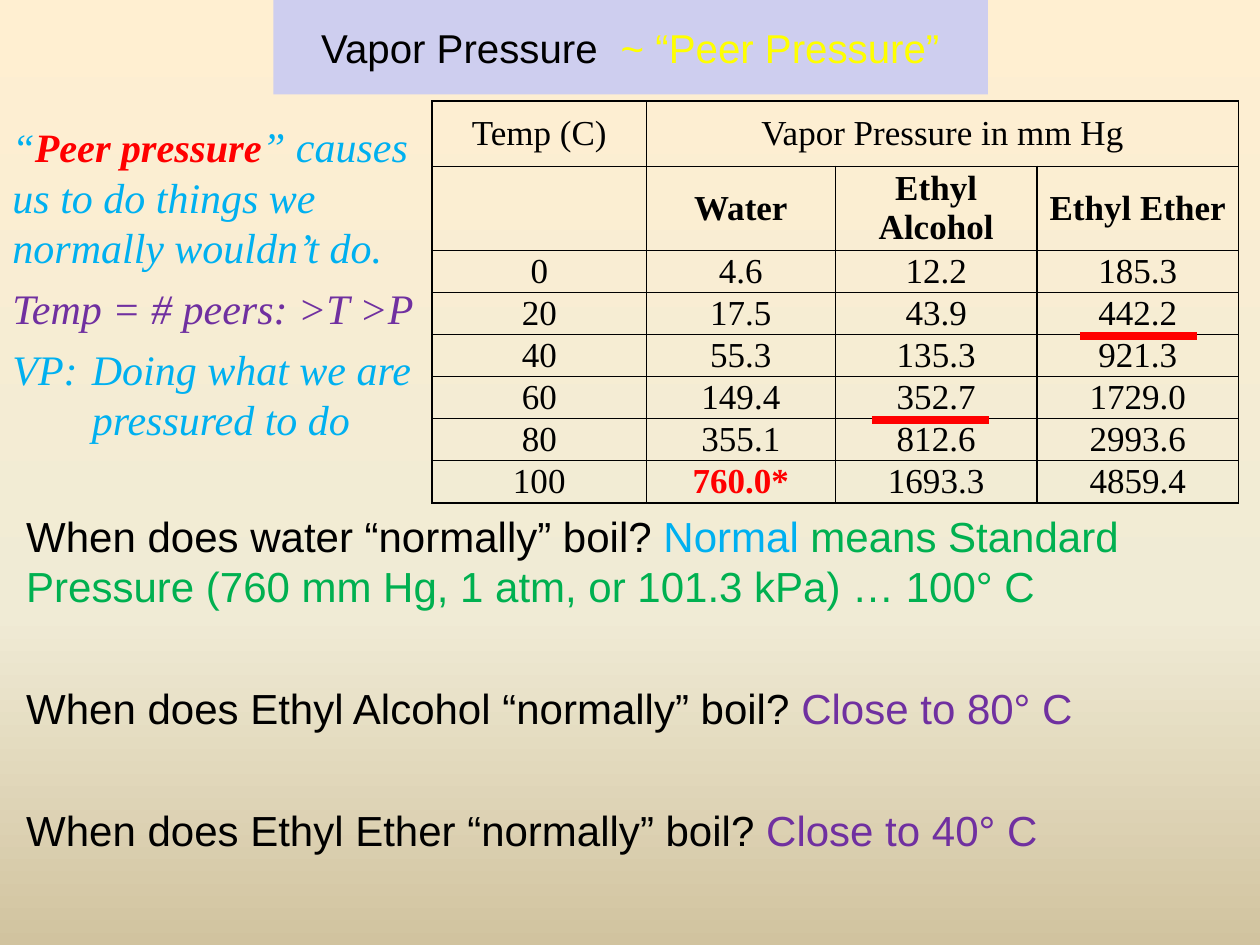
from copy import deepcopy
from dataclasses import dataclass
from typing import NamedTuple

from lxml.etree import SubElement
from pptx import Presentation
from pptx.dml.color import RGBColor as Color
from pptx.enum.shapes import MSO_CONNECTOR as Connector
from pptx.enum.text import MSO_ANCHOR as Anchor, PP_ALIGN as Align
from pptx.oxml.ns import qn
from pptx.util import Inches, Pt

COLUMNS, ROWS, CELL = 100, 75, 0.1


@dataclass(frozen=True)
class Theme:
    """Colours, fonts and type sizes of the slide."""
    sans: str = "Arial"
    serif: str = "Times New Roman"
    title_size: float = 23
    body_size: float = 24
    table_size: float = 20
    border: float = 1
    strike: float = 4.5
    black: str = "000000"
    red: str = "FF0000"
    yellow: str = "FFFF00"
    blue: str = "00B0F0"
    green: str = "00B050"
    purple: str = "7030A0"
    banner: str = "CECEEF"
    background: tuple = ((0, "FFEFD1"), (0.65, "F0EBD5"), (1, "D1C39F"))


THEME = Theme()


class Box(NamedTuple):
    """A rectangle in grid columns and rows."""
    left: float
    top: float
    width: float
    height: float

    def lengths(self):
        """Return the rectangle as slide lengths."""
        return [grid(value) for value in self]


def grid(count):
    """Return the length of a number of grid cells."""
    return Inches(round(count * CELL, 3))


def rgb(code):
    """Return a colour from its hex code."""
    return Color.from_string(code)


def style(font, name, size, color=None, bold=None, italic=None):
    """Set the typeface, size, colour and weight of a font."""
    font.name, font.size, font.bold, font.italic = name, Pt(size), bold, italic
    if color:
        font.color.rgb = rgb(color)


def add_runs(paragraph, runs):
    """Add (text, colour) runs to a paragraph."""
    for text, color in runs:
        run = paragraph.add_run()
        run.text = text
        run.font.color.rgb = rgb(color)


def paint_background(slide):
    """Fill the slide with a vertical gradient."""
    fill = slide.background.fill
    fill.gradient()
    fill.gradient_angle = 270
    stops = slide.background._cSld.find(".//" + qn("a:gsLst"))
    stops.append(deepcopy(stops[-1]))
    for stop, (position, color) in zip(fill.gradient_stops, THEME.background):
        stop.position = position
        stop.color.rgb = rgb(color)


def add_title(slide, box):
    """Place the title banner."""
    title = slide.shapes.title
    title.left, title.top, title.width, title.height = box.lengths()
    title.fill.solid()
    title.fill.fore_color.rgb = rgb(THEME.banner)
    title.text_frame.vertical_anchor = Anchor.MIDDLE
    paragraph = title.text_frame.paragraphs[0]
    paragraph.alignment = Align.CENTER
    style(paragraph.font, THEME.sans, THEME.title_size)
    add_runs(paragraph, [("Vapor Pressure ", THEME.black),
                         (" ~ “Peer Pressure”", THEME.yellow)])


def add_text(slide, box, paragraphs, font, gap, italic=None):
    """Add a wrapped text box with a gap between paragraphs."""
    frame = slide.shapes.add_textbox(*box.lengths()).text_frame
    frame.word_wrap = True
    for index, runs in enumerate(paragraphs):
        paragraph = frame.add_paragraph() if index else frame.paragraphs[0]
        paragraph.space_before = Pt(gap if index else 0)
        style(paragraph.font, font, THEME.body_size, italic=italic)
        add_runs(paragraph, runs)
    return frame


def add_analogy(slide, box):
    """Add the peer pressure analogy with its hanging definition."""
    frame = add_text(slide, box, [
        [("“", THEME.blue), ("Peer pressure", THEME.red),
         ("” causes us to do things we normally wouldn’t do.", THEME.blue)],
        [("Temp = # peers: >T >P", THEME.purple)],
        [("VP:\tDoing what we are pressured to do", THEME.blue)],
    ], THEME.serif, 6, italic=True)
    opening, emphasis, closing = frame.paragraphs[0].runs
    emphasis.font.bold = True
    opening.font.size = emphasis.font.size = Pt(THEME.title_size)
    properties = frame.paragraphs[-1]._p.get_or_add_pPr()
    properties.set("marL", str(Inches(0.63)))
    properties.set("indent", str(-Inches(0.63)))


def add_questions(slide, box):
    """Add the boiling point questions and their answers."""
    add_text(slide, box, [
        [("When does water “normally” boil? ", THEME.black),
         ("Normal", THEME.blue),
         (" means Standard Pressure (760 mm Hg, 1 atm, or 101.3 kPa)"
          " … 100° C", THEME.green)],
        [("When does Ethyl Alcohol “normally” boil? ", THEME.black),
         ("Close to 80° C", THEME.purple)],
        [("When does Ethyl Ether “normally” boil? ", THEME.black),
         ("Close to 40° C", THEME.purple)],
    ], THEME.sans, 41)


def add_borders(cell):
    """Draw all four borders of a cell."""
    properties = cell._tc.get_or_add_tcPr()
    for index, side in enumerate(("lnL", "lnR", "lnT", "lnB")):
        line = SubElement(properties, qn("a:" + side), w=str(Pt(THEME.border)))
        fill = SubElement(line, qn("a:solidFill"))
        SubElement(fill, qn("a:srgbClr"), val=THEME.black)
        properties.insert(index, line)


def add_pressure_table(slide, box):
    """Add the table of vapor pressures by temperature."""
    rows = [
        ("Temp (C)", "Vapor Pressure in mm Hg", "", ""),
        ("", "Water", "Ethyl Alcohol", "Ethyl Ether"),
        ("0", "4.6", "12.2", "185.3"),
        ("20", "17.5", "43.9", "442.2"),
        ("40", "55.3", "135.3", "921.3"),
        ("60", "149.4", "352.7", "1729.0"),
        ("80", "355.1", "812.6", "2993.6"),
        ("100", "760.0*", "1693.3", "4859.4"),
    ]
    table = slide.shapes.add_table(len(rows), 4, *box.lengths()).table
    for column, width in zip(table.columns, (17, 15, 16, 16)):
        column.width = grid(width)
    for row, height in zip(table.rows, [5.2, 6.1] + [3.1] * 6):
        row.height = grid(height)
    for row_index, values in enumerate(rows):
        for column_index, text in enumerate(values):
            cell = table.cell(row_index, column_index)
            cell.fill.background()
            add_borders(cell)
            cell.vertical_anchor = Anchor.MIDDLE
            cell.margin_left = cell.margin_right = Inches(0.07)
            cell.margin_top = cell.margin_bottom = 0
            cell.text = text
            paragraph = cell.text_frame.paragraphs[0]
            paragraph.alignment = Align.CENTER
            boiling = text.endswith("*")
            style(paragraph.font, THEME.serif, THEME.table_size,
                  THEME.red if boiling else THEME.black,
                  bold=boiling or row_index == 1)
    table.cell(0, 1).merge(table.cell(0, 3))


def add_strike(slide, box):
    """Draw a thick red line along the top of a box."""
    left, top, width, height = box.lengths()
    line = slide.shapes.add_connector(
        Connector.STRAIGHT, left, top, left + width, top + height)
    line.line.color.rgb = rgb(THEME.red)
    line.line.width = Pt(THEME.strike)
    SubElement(line._element.spPr, qn("a:effectLst"))


def main():
    """Build and save the vapor pressure slide."""
    presentation = Presentation()
    presentation.slide_width, presentation.slide_height = grid(COLUMNS), grid(ROWS)
    slide = presentation.slides.add_slide(presentation.slide_layouts[5])
    paint_background(slide)
    add_title(slide, Box(21.7, 0, 56.7, 7.5))
    add_questions(slide, Box(1.1, 40, 97.5, 28.6))
    add_pressure_table(slide, Box(34.3, 8, 64, 29.9))
    add_analogy(slide, Box(0, 9.1, 34.2, 26.9))
    for left, top in ((69.2, 33.3), (85.7, 26.7)):
        add_strike(slide, Box(left, top, 9.3, 0))
    presentation.save("out.pptx")


if __name__ == "__main__":
    main()
